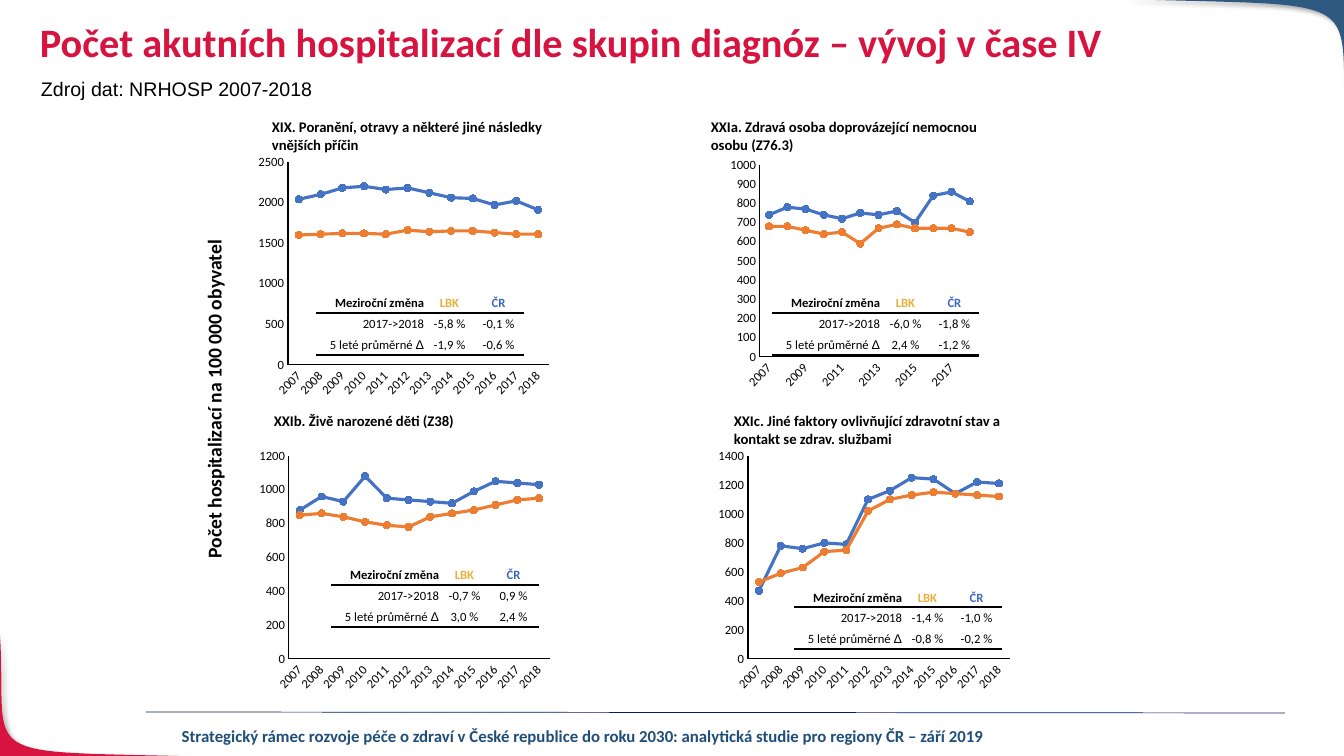
from pptx import Presentation, util as u
from pptx.chart.data import CategoryChartData
from pptx.dml.color import RGBColor
from pptx.enum import chart as ch, shapes, text
from pptx.oxml import parse_xml
from pptx.oxml.ns import nsdecls, qn

PX = 914400 / 100.8
RED = RGBColor(0xD7, 0x14, 0x40)
BLUE = RGBColor(0x2E, 0x59, 0x80)
NAVY = RGBColor(0x00, 0x20, 0x60)
STEEL = RGBColor(0x1F, 0x4E, 0x79)
GOLD = RGBColor(0xE7, 0xB1, 0x3D)
SKY = RGBColor(0x3D, 0x67, 0xBC)
BLACK = RGBColor(0, 0, 0)
LINES = [RGBColor(0x44, 0x72, 0xC4), RGBColor(0xED, 0x7D, 0x31)]
LEFT, MID, RIGHT = text.PP_ALIGN.LEFT, text.PP_ALIGN.CENTER, text.PP_ALIGN.RIGHT

# Content
TITLE = "Počet akutních hospitalizací dle skupin diagnóz – vývoj v čase IV"
SOURCE = "Zdroj dat: NRHOSP 2007-2018"
UNIT = "Počet hospitalizací na 100 000 obyvatel"
FOOTER = ("Strategický rámec rozvoje péče o zdraví v České republice do roku 2030: "
          "analytická studie pro regiony ČR – září 2019")
YEARS = [str(y) for y in range(2007, 2019)]
HEAD = ["Meziroční změna", "LBK", "ČR"]
LAST = "2017->2018"
MEAN = [("5 leté průměrné ", "Calibri"), ("Δ", "Arial")]

# head: box of the heading; chart: left, top; plot: inner plot box; table: left, top
PANELS = [
    dict(name="XXIa. Zdravá osoba doprovázející nemocnou osobu (Z76.3)",
         head=(701, 113, 315, 47), chart=(690, 150), plot=(760, 165, 219, 192),
         table=(773, 292), top=1000, step=100, skip=2, row=21,
         data=[(740, 780, 770, 740, 720, 750, 740, 760, 700, 840, 860, 810),
               (680, 680, 660, 640, 650, 590, 670, 690, 670, 670, 670, 650)],
         change=[("-6,0 %", "-1,8 %"), ("2,4 %", "-1,2 %")]),
    dict(name="XIX. Poranění, otravy a některé jiné následky vnějších příčin",
         head=(262, 113, 304, 47), chart=(252, 150), plot=(288, 162, 261, 203),
         table=(317, 292), top=2500, step=500, skip=1, row=21,
         data=[(2040, 2100, 2180, 2200, 2160, 2180, 2120, 2060, 2050, 1970, 2020, 1910),
               (1600, 1610, 1620, 1620, 1610, 1660, 1640, 1650, 1650, 1630, 1610, 1610)],
         change=[("-5,8 %", "-0,1 %"), ("-1,9 %", "-0,6 %")]),
    dict(name="XXIb. Živě narozené děti (Z38)",
         head=(264, 407, 204, 45), chart=(253, 444), plot=(289, 456, 261, 203),
         table=(332, 564), top=1200, step=200, skip=1, row=21,
         data=[(880, 960, 930, 1080, 950, 940, 930, 920, 990, 1050, 1040, 1030),
               (850, 860, 840, 810, 790, 780, 840, 860, 880, 910, 940, 950)],
         change=[("-0,7 %", "0,9 %"), ("3,0 %", "2,4 %")]),
    dict(name="XXIc. Jiné faktory ovlivňující zdravotní stav a kontakt se zdrav. službami",
         head=(724, 407, 321, 47), chart=(714, 444), plot=(748, 456, 262, 203),
         table=(795, 588), top=1400, step=200, skip=1, row=19,
         data=[(470, 780, 760, 800, 790, 1100, 1160, 1250, 1240, 1140, 1220, 1210),
               (530, 590, 630, 740, 750, 1020, 1100, 1130, 1150, 1140, 1130, 1120)],
         change=[("-1,4 %", "-1,0 %"), ("-0,8 %", "-0,2 %")]),
]
SIZE = (303, 253)
COLS = [108, 49, 49]
# Each corner: start, two control points, end of the curve, then the slide corner
CORNERS = [(RED, [(215, 757), (-34, 750), (8, 765), (0, 635)], (-1, 757)),
           (BLUE, [(1120, -1), (1381, 7), (1337, -10), (1346, 143)], (1346, -1))]


def emu(*px):
    return [u.Emu(round(v * PX)) for v in px]


def put(frame, words, size=9, font="Calibri", color=BLACK, bold=False,
        align=LEFT, wrap=True, gap=None):
    frame.word_wrap = wrap
    para = frame.paragraphs[0]
    para.alignment, para.line_spacing = align, gap
    for part, face in ([(words, font)] if isinstance(words, str) else words):
        run = para.add_run()
        run.text = part
        run.font.size, run.font.name, run.font.bold = u.Pt(size), face, bold
        run.font.color.rgb = color


def label(box, words, turn=0, **form):
    item = slide.shapes.add_textbox(*emu(*box))
    item.rotation = turn
    put(item.text_frame, words, **form)


def corner(color, curve, tip):
    def at(t):
        mix = ((1 - t) ** 3, 3 * t * (1 - t) ** 2, 3 * t * t * (1 - t), t ** 3)
        return emu(*(sum(m * p[i] for m, p in zip(mix, curve)) for i in (0, 1)))
    pen = slide.shapes.build_freeform(*at(0))
    pen.add_line_segments([at(i / 40) for i in range(1, 41)] + [emu(*tip)])
    item = pen.convert_to_shape()
    item.fill.solid()
    item.fill.fore_color.rgb = color
    item.line.fill.background()
    item._element.spPr.append(parse_xml(
        f'<a:effectLst {nsdecls("a")}><a:outerShdw blurRad="50800" dist="38100" dir="2700000">'
        '<a:srgbClr val="000000"><a:alpha val="40000"/></a:srgbClr></a:outerShdw></a:effectLst>'))


def graph(panel):
    data = CategoryChartData()
    data.categories = YEARS
    for i, vals in enumerate(panel["data"], 1):
        data.add_series(f"Series {i}", vals)
    box = panel["chart"] + SIZE
    chart = slide.shapes.add_chart(ch.XL_CHART_TYPE.LINE_MARKERS, *emu(*box), data).chart
    chart.has_legend = chart.has_title = False
    chart.font.size, chart.font.name, chart.font.color.rgb = u.Pt(10), "Calibri", BLACK
    plot = chart.plots[0]
    plot.vary_by_categories = False
    for line, color in zip(plot.series, LINES):
        line.smooth = False
        line.format.line.width = u.Pt(2.25)
        line.format.line.color.rgb = color
        mark = line.marker
        mark.style, mark.size = ch.XL_MARKER_STYLE.CIRCLE, 5
        mark.format.fill.solid()
        mark.format.fill.fore_color.rgb = color
        mark.format.line.color.rgb = color
    for axis in (chart.category_axis, chart.value_axis):
        axis.has_major_gridlines = False
        axis.major_tick_mark = axis.minor_tick_mark = ch.XL_TICK_MARK.NONE
        axis.format.line.width = u.Pt(0.75)
        axis.format.line.color.rgb = BLACK
        face = axis.tick_labels.font
        face.size, face.name, face.color.rgb = u.Pt(9), "Calibri", BLACK
    axis.minimum_scale, axis.maximum_scale, axis.major_unit = 0, panel["top"], panel["step"]

    # Slanted years, clear background and the place of the plot
    root = chart.element
    root.xpath(".//c:catAx/c:txPr/a:bodyPr")[0].set("rot", "-2700000")
    root.xpath(".//c:catAx/c:noMultiLvlLbl")[0].addprevious(
        parse_xml(f'<c:tickLblSkip {nsdecls("c")} val="{panel["skip"]}"/>'))
    root.find(qn("c:chart")).addnext(parse_xml(
        f'<c:spPr {nsdecls("c", "a")}><a:noFill/><a:ln><a:noFill/></a:ln></c:spPr>'))
    area = root.xpath(".//c:plotArea")[0]
    for old in area.findall(qn("c:layout")):
        area.remove(old)
    x, y, w, h = panel["plot"]
    spots = dict(x=(x - box[0]) / box[2], y=(y - box[1]) / box[3], w=w / box[2], h=h / box[3])
    area.insert(0, parse_xml(
        f'<c:layout {nsdecls("c")}><c:manualLayout><c:layoutTarget val="inner"/>'
        '<c:xMode val="edge"/><c:yMode val="edge"/>'
        + "".join(f'<c:{k} val="{v:.4f}"/>' for k, v in spots.items())
        + '</c:manualLayout></c:layout>'))


def grid(panel):
    tall = [panel["row"], 21, 21]
    rows = [HEAD, [LAST, *panel["change"][0]], [MEAN, *panel["change"][1]]]
    table = slide.shapes.add_table(
        3, 3, *emu(*panel["table"], sum(COLS), sum(tall))).table
    table.first_row = table.horz_banding = False
    for i, wide in enumerate(emu(*COLS)):
        table.columns[i].width = wide
    for r, high in enumerate(emu(*tall)):
        table.rows[r].height = high
        for c, words in enumerate(rows[r]):
            cell = table.cell(r, c)
            cell.margin_left, cell.margin_right, cell.margin_top, cell.margin_bottom = emu(1, 1, 1, 0)
            cell.vertical_anchor = text.MSO_ANCHOR.MIDDLE
            put(cell.text_frame, words, bold=r == 0, align=MID if c else RIGHT,
                color=BLACK if r else (BLACK, GOLD, SKY)[c])
            cell.fill.background()
            dark = {"T": r == 1, "B": r != 1}
            for i, side in enumerate("LRTB"):
                tone = "000000" if dark.get(side) else "FFFFFF"
                cell._tc.tcPr.insert(i, parse_xml(
                    f'<a:ln{side} {nsdecls("a")} w="12700"><a:solidFill>'
                    f'<a:srgbClr val="{tone}"/></a:solidFill></a:ln{side}>'))


deck = Presentation()
deck.slide_width, deck.slide_height = emu(1344, 756)
slide = deck.slides.add_slide(deck.slide_layouts[6])

# Corners and footer
for shape in CORNERS:
    corner(*shape)
rule = slide.shapes.add_connector(shapes.MSO_CONNECTOR.STRAIGHT, *emu(146, 712, 1285, 713))
rule.line.width = u.Pt(0.5)
rule.line.color.rgb = NAVY
rule._element.spPr.append(parse_xml(f'<a:effectLst {nsdecls("a")}/>'))
label((169, 721, 828, 30), FOOTER, size=12, color=STEEL, bold=True, align=MID)

# Headings
label((31, 72, 853, 34), SOURCE, size=14, font="Arial")
label((30, 18, 1159, 70), TITLE, size=28.8, color=RED, bold=True, gap=0.9)
label((43, 382, 342, 34), UNIT, turn=270, size=14, bold=True, align=MID, wrap=False)
for panel in PANELS:
    label(panel["head"], panel["name"], size=10.5, bold=True)

# Charts with their tables
for panel in PANELS:
    graph(panel)
    grid(panel)

deck.save("out.pptx")
